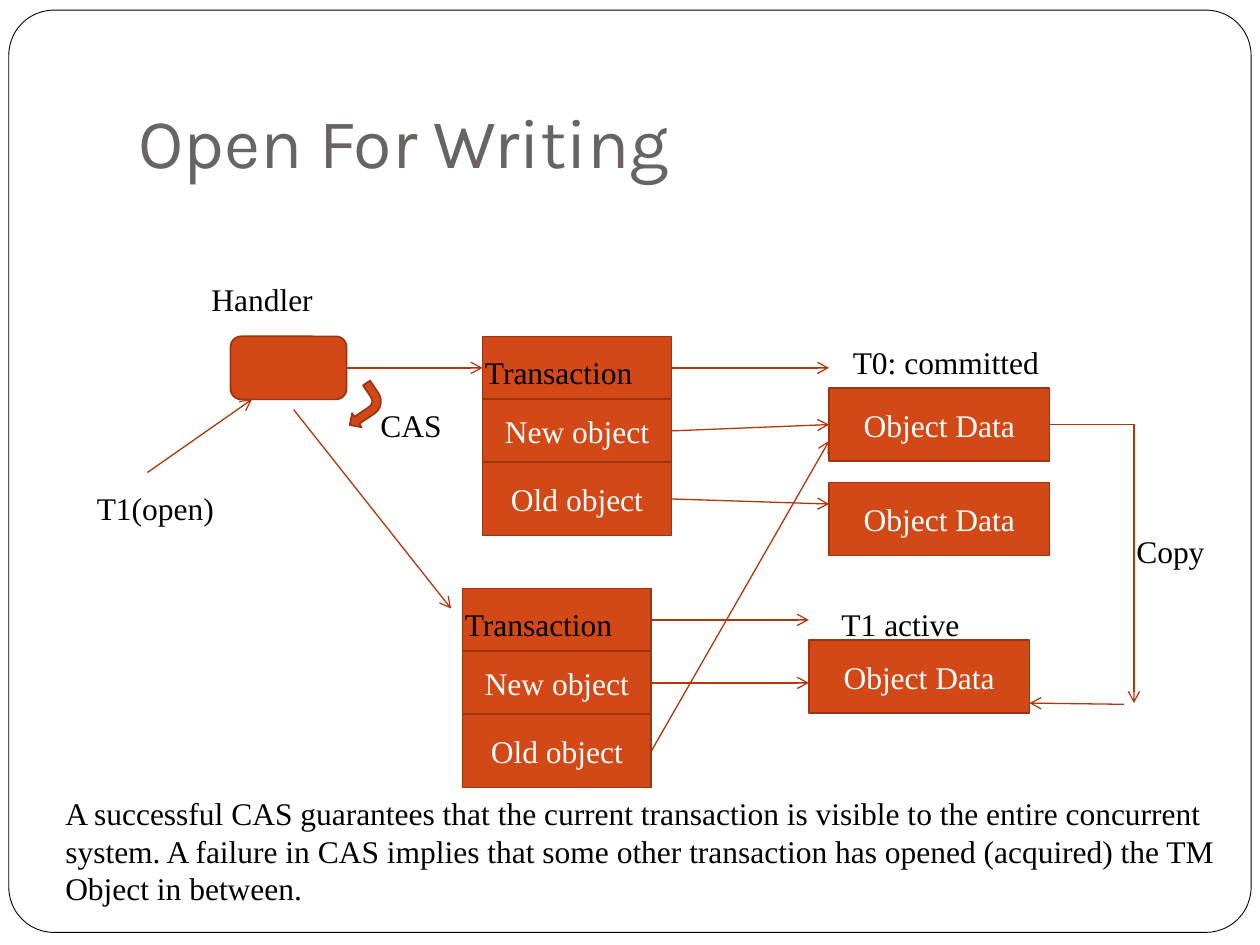
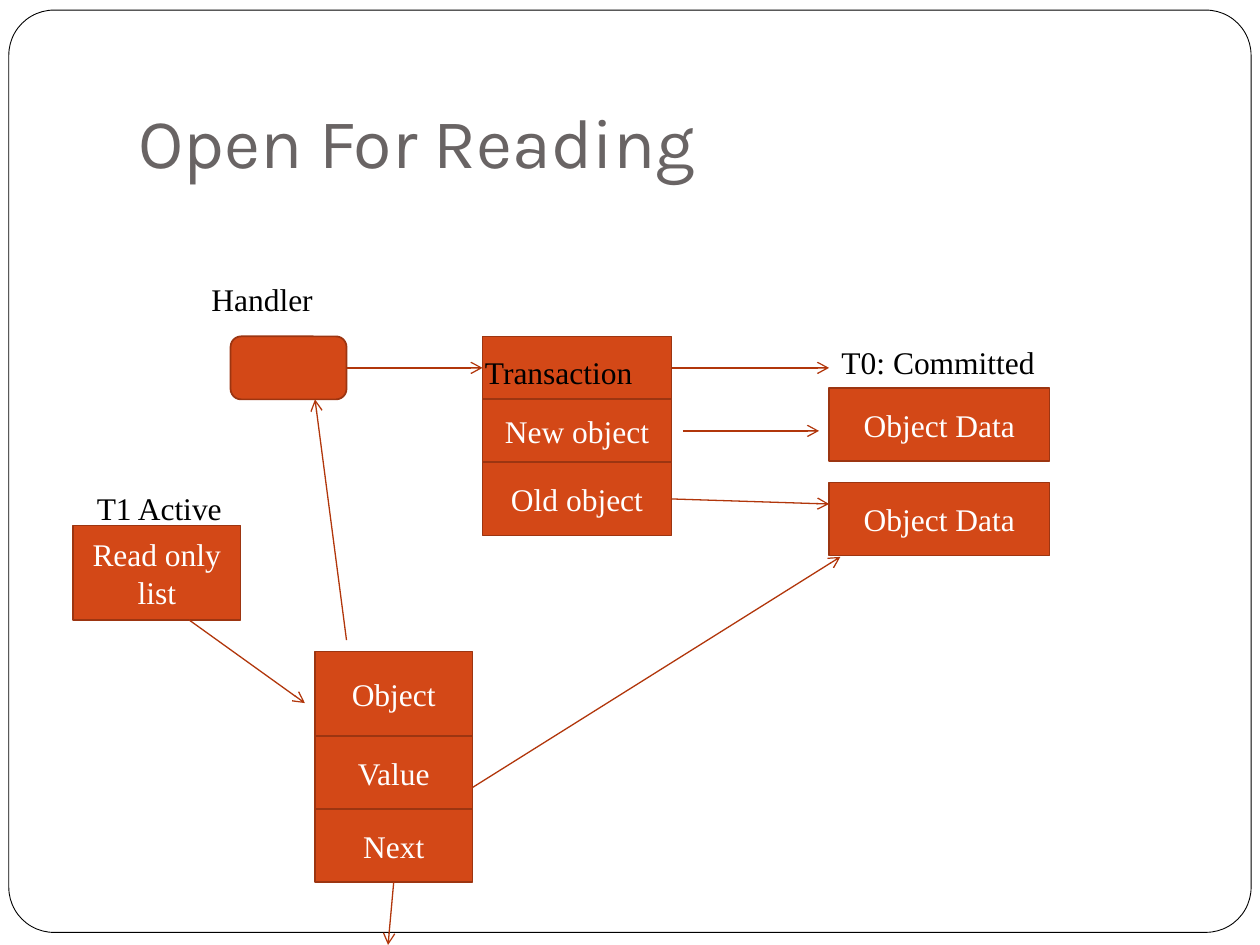
from dataclasses import dataclass

from lxml import etree
from pptx import Presentation
from pptx.dml.color import RGBColor
from pptx.enum.shapes import MSO_CONNECTOR, MSO_SHAPE
from pptx.enum.text import MSO_ANCHOR, MSO_AUTO_SIZE, PP_ALIGN
from pptx.oxml.ns import qn
from pptx.util import Inches, Pt

RECTANGLE = MSO_SHAPE.RECTANGLE
ROUNDED = MSO_SHAPE.ROUNDED_RECTANGLE
HANDLER = MSO_SHAPE.FLOWCHART_ALTERNATE_PROCESS
BENT_ARROW = MSO_SHAPE.BENT_ARROW
STRAIGHT = MSO_CONNECTOR.STRAIGHT
ELBOW = MSO_CONNECTOR.ELBOW
LEFT, CENTER = PP_ALIGN.LEFT, PP_ALIGN.CENTER
MIDDLE, BOTTOM = MSO_ANCHOR.MIDDLE, MSO_ANCHOR.BOTTOM
FIXED_SIZE, GROW_TO_FIT = MSO_AUTO_SIZE.NONE, MSO_AUTO_SIZE.SHAPE_TO_FIT_TEXT
SIDE_LEFT, SIDE_BOTTOM, SIDE_RIGHT = 1, 2, 3

TITLE_ONLY = 5
DATA_SIZE = (1.75, 0.58)
RECORD_WIDTH = 1.5
RECORD_HEIGHTS = (0.5, 0.5, 0.58)
LABEL_HEIGHT = 0.4


@dataclass(frozen=True)
class Theme:
    paper: RGBColor = RGBColor(0xFF, 0xFF, 0xFF)
    ink: RGBColor = RGBColor(0x00, 0x00, 0x00)
    title: RGBColor = RGBColor(0x69, 0x64, 0x64)
    box: RGBColor = RGBColor(0xD3, 0x48, 0x17)
    box_edge: RGBColor = RGBColor(0x9C, 0x35, 0x11)
    arrow: RGBColor = RGBColor(0xB1, 0x36, 0x0B)
    title_font: str = "Karla"
    body_font: str = "Times New Roman"
    title_size: Pt = Pt(40)
    body_size: Pt = Pt(18)
    frame_width: Pt = Pt(0.5)
    box_width: Pt = Pt(1)
    arrow_width: Pt = Pt(0.75)


class DiagramDeck:
    def __init__(self, theme):
        self.theme = theme
        self.slide = None
        self.presentation = Presentation()
        self.presentation.slide_width = Inches(10)
        self.presentation.slide_height = Inches(7.5)

    def start_slide(self, title):
        layout = self.presentation.slide_layouts[TITLE_ONLY]
        self.slide = self.presentation.slides.add_slide(layout)
        self.frame()
        self.title(title)

    def frame(self):
        """Draw the rounded page border behind everything else."""
        theme = self.theme
        frame = self.shape(ROUNDED, 0.07, 0.08, 9.86, 7.32,
                           theme.paper, theme.ink, theme.frame_width)
        frame.adjustments[0] = 0.049
        self.slide.shapes.element.insert(2, frame.element)

    def title(self, text):
        theme = self.theme
        title = self.slide.shapes.title
        title.left, title.top = Inches(1), Inches(0.3)
        title.width, title.height = Inches(8.5), Inches(1.25)
        text_frame = title.text_frame
        text_frame.auto_size = FIXED_SIZE
        text_frame.vertical_anchor = BOTTOM
        text_frame.margin_bottom = Inches(0.1)
        self.set_text(text_frame, text, theme.title, LEFT, theme.title_font, theme.title_size)

    def set_text(self, text_frame, text, color, alignment, font_name=None, size=None):
        text_frame.text = text
        text_frame.word_wrap = True
        paragraph = text_frame.paragraphs[0]
        paragraph.alignment = alignment
        font = paragraph.runs[0].font
        font.name = font_name or self.theme.body_font
        font.size = size or self.theme.body_size
        font.color.rgb = color

    def shape(self, kind, left, top, width, height, fill=None, edge=None, edge_width=None):
        shape = self.slide.shapes.add_shape(
            kind, Inches(left), Inches(top), Inches(width), Inches(height))
        shape.shadow.inherit = False
        shape.fill.solid()
        shape.fill.fore_color.rgb = fill or self.theme.box
        shape.line.color.rgb = edge or self.theme.box_edge
        shape.line.width = edge_width or self.theme.box_width
        return shape

    def box(self, text, left, top, width, height):
        box = self.shape(RECTANGLE, left, top, width, height)
        if text:
            box.text_frame.vertical_anchor = MIDDLE
            self.set_text(box.text_frame, text, self.theme.paper, CENTER)
        return box

    def stack(self, texts, left, top, width, heights):
        """Pile boxes downwards without gaps and return them."""
        boxes = []
        for text, height in zip(texts, heights):
            boxes.append(self.box(text, left, top, width, height))
            top += height
        return boxes

    def label(self, text, left, top, width, height=LABEL_HEIGHT):
        label = self.slide.shapes.add_textbox(
            Inches(left), Inches(top), Inches(width), Inches(height))
        self.set_text(label.text_frame, text, self.theme.ink, LEFT)
        label.text_frame.auto_size = GROW_TO_FIT

    def transaction(self, left, top):
        """Draw a transaction record; return its header, new and old boxes."""
        boxes = self.stack(("", "New object", "Old object"),
                           left, top, RECORD_WIDTH, RECORD_HEIGHTS)
        self.label("Transaction", left - 0.08, top + 0.08, 1.75)
        return boxes

    def object_data(self, left, top):
        return self.box("Object Data", left, top, *DATA_SIZE)

    def arrow(self, start, end, kind=STRAIGHT):
        """Each end is either an (x, y) point in inches or a (shape, side) pair."""
        connector = self.slide.shapes.add_connector(kind, 0, 0, 0, 0)
        if isinstance(start[0], (int, float)):
            connector.begin_x, connector.begin_y = map(Inches, start)
        else:
            connector.begin_connect(*start)
        if isinstance(end[0], (int, float)):
            connector.end_x, connector.end_y = map(Inches, end)
        else:
            connector.end_connect(*end)
        connector.line.color.rgb = self.theme.arrow
        connector.line.width = self.theme.arrow_width
        properties = connector.element.spPr
        line = properties.find(qn("a:ln"))
        etree.SubElement(line, qn("a:tailEnd"), type="arrow")
        etree.SubElement(properties, qn("a:effectLst"))
        return connector

    def corner_arrow(self, start, end):
        """Arrow that runs sideways and then turns once."""
        connector = self.arrow(start, end, ELBOW)
        connector.element.spPr.find(qn("a:prstGeom")).set("prst", "bentConnector2")

    def committed_state(self):
        """Draw the handler and the T0 record; return the parts to link to."""
        handler = self.shape(HANDLER, 1.83, 2.67, 0.92, 0.5)
        self.label("Handler", 1.58, 2.17, 2)
        header, new, old = self.transaction(3.83, 2.67)
        new_data = self.object_data(6.58, 3.08)
        self.object_data(6.58, 3.83)
        self.arrow((handler, SIDE_RIGHT), (header, SIDE_LEFT))
        self.arrow((header, SIDE_RIGHT), (6.58, 2.92))
        self.arrow((old, SIDE_RIGHT), (6.58, 4))
        return new, new_data


def open_for_writing(deck):
    deck.start_slide("Open For Writing")
    new, new_data = deck.committed_state()
    deck.label("T0: committed", 6.67, 2.67, 1.83)
    deck.arrow((new, SIDE_RIGHT), (new_data, SIDE_LEFT))

    deck.label("T1(open)", 0.67, 3.83, 1.83)
    deck.arrow((1.17, 3.75), (2, 3.17))
    deck.arrow((2.33, 3.25), (3.58, 4.83))

    header, active_new, active_old = deck.transaction(3.67, 4.67)
    deck.object_data(6.42, 5.08)
    deck.label("T1 active", 6.58, 4.75, 1.75)
    deck.arrow((header, SIDE_RIGHT), (6.42, 4.92))
    deck.arrow((active_new, SIDE_RIGHT), (6.42, 5.42))
    deck.arrow((active_old, SIDE_RIGHT), (6.58, 3.5))

    deck.corner_arrow((new_data, SIDE_RIGHT), (9, 5.58))
    deck.arrow((8.92, 5.59), (8.17, 5.58))
    deck.label("Copy", 8.92, 4.17, 0.83)

    deck.label(
        "A successful CAS guarantees that the current transaction is visible to the "
        "entire concurrent system. A failure in CAS implies that some other transaction "
        "has opened (acquired) the TM Object in between.", 0.42, 6.25, 9.33, 1.01)
    swap_arrow = deck.shape(BENT_ARROW, 2.71, 3.09, 0.33, 0.27)
    swap_arrow.rotation = 146.1
    deck.label("CAS", 2.92, 3.17, 0.75)


def open_for_reading(deck):
    deck.start_slide("Open For Reading")
    deck.committed_state()
    deck.label("T0: Committed", 6.58, 2.67, 1.92)
    deck.arrow((5.42, 3.42), (6.5, 3.42))

    deck.label("T1 Active", 0.67, 3.83, 1.83)
    deck.box("Read only list", 0.58, 4.17, 1.33, 0.75)
    deck.arrow((1.5, 4.92), (2.42, 5.58))

    list_entry = deck.stack(("Object", "Value", "Next"), 2.5, 5.17, 1.25, (0.67, 0.58, 0.58))
    deck.arrow((2.75, 5.08), (2.5, 3.17))
    deck.arrow((3.75, 6.25), (6.67, 4.42))
    deck.arrow((list_entry[-1], SIDE_BOTTOM), (3.08, 7.5))


def main():
    deck = DiagramDeck(Theme())
    open_for_writing(deck)
    open_for_reading(deck)
    deck.presentation.save("out.pptx")


if __name__ == "__main__":
    main()
